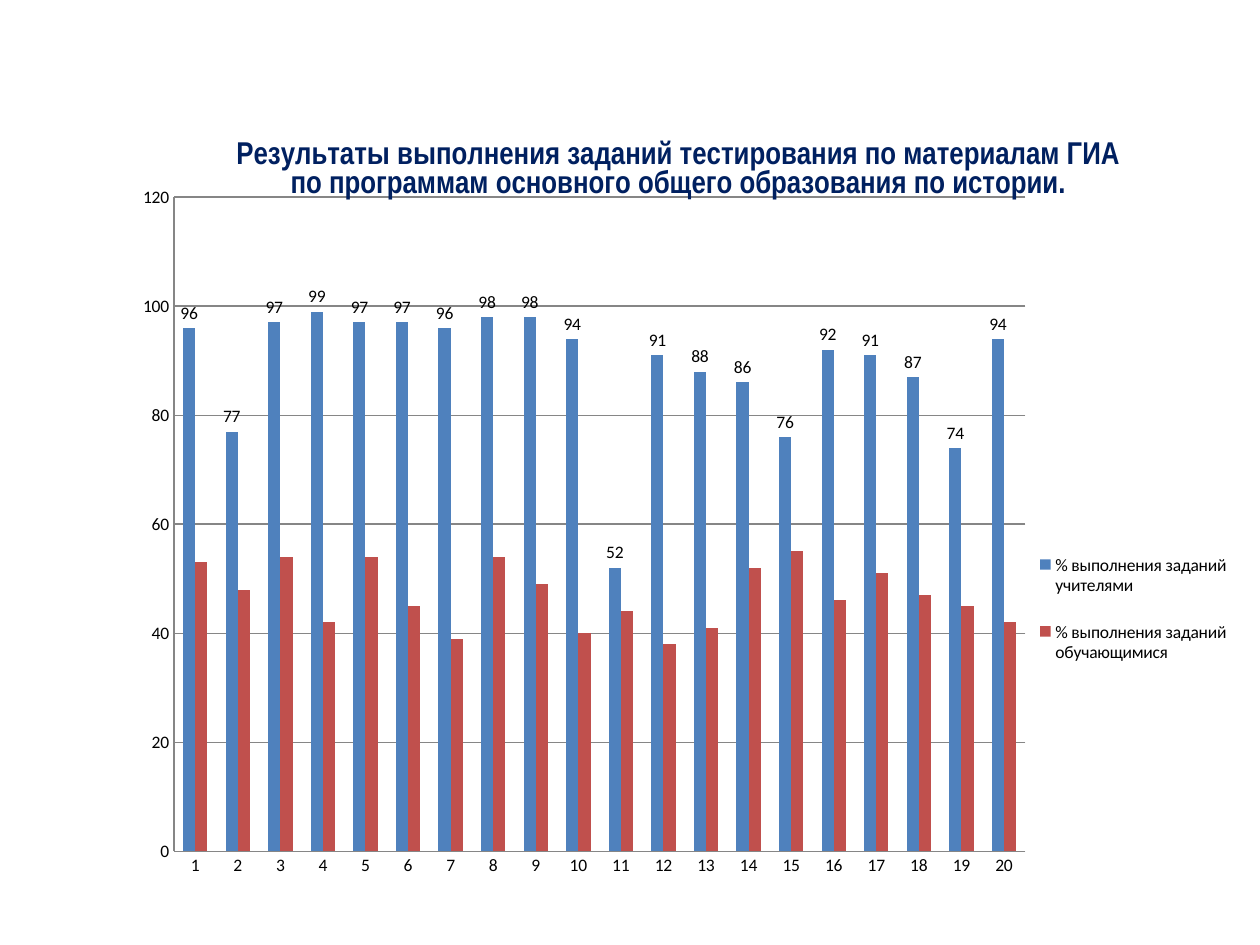
import pptx
import pptx.chart.data
import pptx.dml.color
import pptx.enum.chart
import pptx.oxml
import pptx.util
from pptx.util import Inches


def colour(value):
    return pptx.dml.color.RGBColor.from_string(value)


def make_layout(target, **places):
    """Build a manual chart layout from fractions of the chart area."""
    inner = '<c:layoutTarget val="inner"/>' if target else ""
    modes = "".join(f'<c:{side}Mode val="edge"/>' for side in ("x", "y"))
    values = "".join(f'<c:{name} val="{value}"/>' for name, value in places.items())
    return pptx.oxml.parse_xml(
        '<c:layout xmlns:c="http://schemas.openxmlformats.org/drawingml/2006/chart">'
        f"<c:manualLayout>{inner}{modes}{values}</c:manualLayout></c:layout>")


TITLE = ("Результаты выполнения заданий тестирования по материалам ГИА "
         "по программам основного общего образования по истории.")
SERIES = [
    ("% выполнения заданий учителями", "4F81BD",
     [96, 77, 97, 99, 97, 97, 96, 98, 98, 94, 52, 91, 88, 86, 76, 92, 91, 87, 74, 94]),
    ("% выполнения заданий обучающимися", "C0504D",
     [53, 48, 54, 42, 54, 45, 39, 54, 49, 40, 44, 38, 41, 52, 55, 46, 51, 47, 45, 42]),
]

deck = pptx.Presentation()
deck.slide_width, deck.slide_height = Inches(10), Inches(7.5)
page = deck.slides.add_slide(deck.slide_layouts[6])

# Clustered columns: teachers against pupils, task by task
data = pptx.chart.data.CategoryChartData()
data.categories = [str(task) for task in range(1, 21)]
for name, _, values in SERIES:
    data.add_series(name, values)
chart = page.shapes.add_chart(
    pptx.enum.chart.XL_CHART_TYPE.COLUMN_CLUSTERED,
    Inches(0.84), Inches(0.86), Inches(9.01), Inches(6.41), data).chart
chart.font.size = pptx.util.Pt(10)
chart.font.name = "Calibri"
chart.font.color.rgb = colour("000000")

plot = chart.plots[0]
plot.gap_width = 150
plot.overlap = 0
plot.vary_by_categories = False
for series, (_, fill, _) in zip(plot.series, SERIES):
    series.format.fill.solid()
    series.format.fill.fore_color.rgb = colour(fill)
labels = plot.series[0].data_labels
labels.show_value = True
labels.position = pptx.enum.chart.XL_LABEL_POSITION.OUTSIDE_END

# Axes and gridlines
scale = chart.value_axis
for key, value in {"minimum_scale": 0, "maximum_scale": 120, "major_unit": 20,
                   "has_major_gridlines": True}.items():
    setattr(scale, key, value)
for axis in (chart.category_axis, scale):
    axis.major_tick_mark = pptx.enum.chart.XL_TICK_MARK.NONE
    axis.minor_tick_mark = pptx.enum.chart.XL_TICK_MARK.NONE
for part in (chart.category_axis, scale, scale.major_gridlines):
    part.format.line.color.rgb = colour("868686")
    part.format.line.width = pptx.util.Pt(0.75)

# Chart title
chart.has_title = True
para = chart.chart_title.text_frame.paragraphs[0]
span = para.add_run()
span.text = TITLE
for key, value in {"size": pptx.util.Pt(18), "bold": True, "name": "Arial Narrow"}.items():
    setattr(span.font, key, value)
span.font.color.rgb = colour("002060")

# Legend
chart.has_legend = True
chart.legend.position = pptx.enum.chart.XL_LEGEND_POSITION.RIGHT
chart.legend.include_in_layout = False

# Places of title, legend and plot area
frame = chart.element if hasattr(chart, "element") else chart._chartSpace
for old in frame.xpath("c:chart/c:title/c:layout | c:chart/c:legend/c:layout"
                       " | c:chart/c:plotArea/c:layout"):
    old.getparent().remove(old)
frame.xpath("c:chart/c:title/c:overlay")[0].addprevious(
    make_layout(False, x=0.11, y=0.03))
frame.xpath("c:chart/c:legend/c:overlay")[0].addprevious(
    make_layout(False, x=0.81, y=0.52, w=0.19, h=0.2))
frame.xpath("c:chart/c:plotArea")[0].insert(
    0, make_layout(True, x=0.06, y=0.11, w=0.75, h=0.81))

deck.save("out.pptx")
